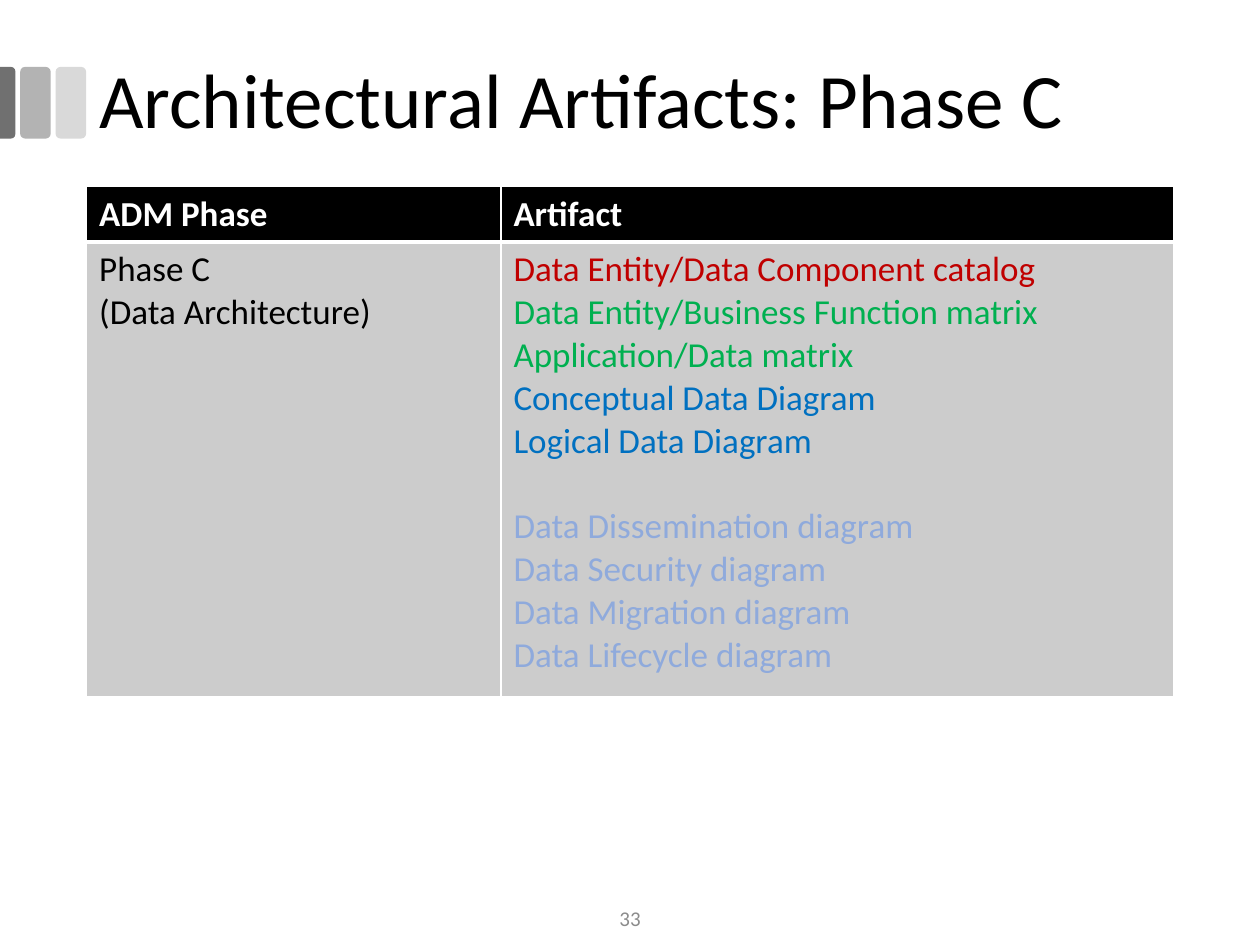
from pptx import Presentation
from pptx.dml.color import RGBColor
from pptx.enum.shapes import MSO_SHAPE
from pptx.enum.text import MSO_ANCHOR, MSO_AUTO_SIZE, PP_ALIGN
from pptx.oxml import parse_xml
from pptx.oxml.ns import nsdecls
from pptx.util import Pt

ROUND, TAB = MSO_SHAPE.ROUNDED_RECTANGLE, MSO_SHAPE.ROUND_2_SAME_RECTANGLE
MIDDLE, FIXED = MSO_ANCHOR.MIDDLE, MSO_AUTO_SIZE.NONE
LEFT, CENTER = PP_ALIGN.LEFT, PP_ALIGN.CENTER

THEME = {
    "font": "Calibri", "title": 44, "body": 20, "small": 12,
    "black": "000000", "white": "FFFFFF", "band": "CCCCCC", "page": "8C8C8C",
    "catalog": "C00000", "matrix": "00B050", "core": "0070C0", "extra": "8FAADC",
}

TITLE = "Architectural Artifacts: Phase C"
PAGE = "33"
HEADS = ["ADM Phase", "Artifact"]
PHASE = [("Phase C", "black"), ("(Data Architecture)", "black")]
ARTIFACTS = [
    ("Data Entity/Data Component catalog", "catalog"),
    ("Data Entity/Business Function matrix Application/Data matrix", "matrix"),
    ("Conceptual Data Diagram", "core"),
    ("Logical Data Diagram", "core"),
    ("Data Dissemination diagram", "extra"),
    ("Data Security diagram", "extra"),
    ("Data Migration diagram", "extra"),
    ("Data Lifecycle diagram", "extra"),
]
FIRST_EXTRA = 4
LINE_GAP = 24.4

# Left edge, top, width, height, in points
TITLE_BOX = (49.5, 12.25, 621, 94.25)
TABLE_BOX = (49.5, 106.5, 621, 291)
PAGE_BOX = (279, 510, 162, 28.75)
COLS, ROWS = (236.75, 384.25), (31, 260)
BAR_TOP, BAR_W, BAR_H = 38.25, 17.5, 41
BARS = [(31.75, "D9D9D9"), (11.5, "B3B3B3")]
EDGE_W, EDGE_FILL = 8.75, "707070"


def color(name):
    return RGBColor.from_string(THEME.get(name, name))


def style(para, size, tint, bold=False, align=LEFT):
    para.alignment = align
    font = para.font
    font.name, font.size, font.bold = THEME["font"], Pt(THEME[size]), bold
    font.color.rgb = color(tint)


def add_bar(slide, kind, box, fill):
    bar = slide.shapes.add_shape(kind, *map(Pt, box))
    bar.shadow.inherit = False
    bar.fill.solid()
    bar.fill.fore_color.rgb = color(fill)
    bar.line.fill.background()
    return bar


def add_bars(slide):
    for left, fill in BARS:
        add_bar(slide, ROUND, (left, BAR_TOP, BAR_W, BAR_H), fill)
    # The edge bar is turned a quarter, so its box is set about its centre
    left = (EDGE_W - BAR_H) / 2
    top = BAR_TOP + (BAR_H - EDGE_W) / 2
    edge = add_bar(slide, TAB, (left, top, BAR_H, EDGE_W), EDGE_FILL)
    edge.rotation = 90
    edge.adjustments[0] = 0.29


def set_borders(cell, base):
    """Draw white cell borders, with the bottom one base points wide."""
    props = cell._tc.get_or_add_tcPr()
    widths = {"lnL": 1, "lnR": 1, "lnT": 1, "lnB": base}
    for place, (tag, width) in enumerate(widths.items()):
        props.insert(place, parse_xml(
            f'<a:{tag} {nsdecls("a")} w="{Pt(width)}"><a:solidFill>'
            f'<a:srgbClr val="{THEME["white"]}"/></a:solidFill></a:{tag}>'))


def fill_cell(cell, lines, fill, bold=False, base=1):
    cell.fill.solid()
    cell.fill.fore_color.rgb = color(fill)
    set_borders(cell, base)
    frame = cell.text_frame
    frame.text = "\n".join(text for text, _ in lines)
    for para, (_, tint) in zip(frame.paragraphs, lines):
        style(para, "body", tint, bold)


def add_grid(slide):
    grid = slide.shapes.add_table(2, 2, *map(Pt, TABLE_BOX)).table
    for col, width in zip(grid.columns, COLS):
        col.width = Pt(width)
    for row, height in zip(grid.rows, ROWS):
        row.height = Pt(height)
    for i, (head, lines) in enumerate(zip(HEADS, (PHASE, ARTIFACTS))):
        fill_cell(grid.cell(0, i), [(head, "white")], "black", True, 3)
        fill_cell(grid.cell(1, i), lines, "band")
    paras = grid.cell(1, 1).text_frame.paragraphs
    paras[FIRST_EXTRA].space_before = Pt(LINE_GAP)


def set_text(shape, box, text, size, tint, align):
    shape.left, shape.top, shape.width, shape.height = map(Pt, box)
    frame = shape.text_frame
    frame.word_wrap, frame.auto_size = True, FIXED
    frame.vertical_anchor = MIDDLE
    frame.text = text
    style(frame.paragraphs[0], size, tint, align=align)


def main():
    deck = Presentation()
    deck.slide_width, deck.slide_height = Pt(720), Pt(540)
    slide = deck.slides.add_slide(deck.slide_layouts[5])
    add_bars(slide)
    title = slide.shapes.title
    set_text(title, TITLE_BOX, TITLE, "title", "black", LEFT)
    title.text_frame.paragraphs[0].line_spacing = 0.9
    add_grid(slide)
    page = slide.shapes.add_textbox(*map(Pt, PAGE_BOX))
    set_text(page, PAGE_BOX, PAGE, "small", "page", CENTER)
    deck.save("out.pptx")


if __name__ == "__main__":
    main()
